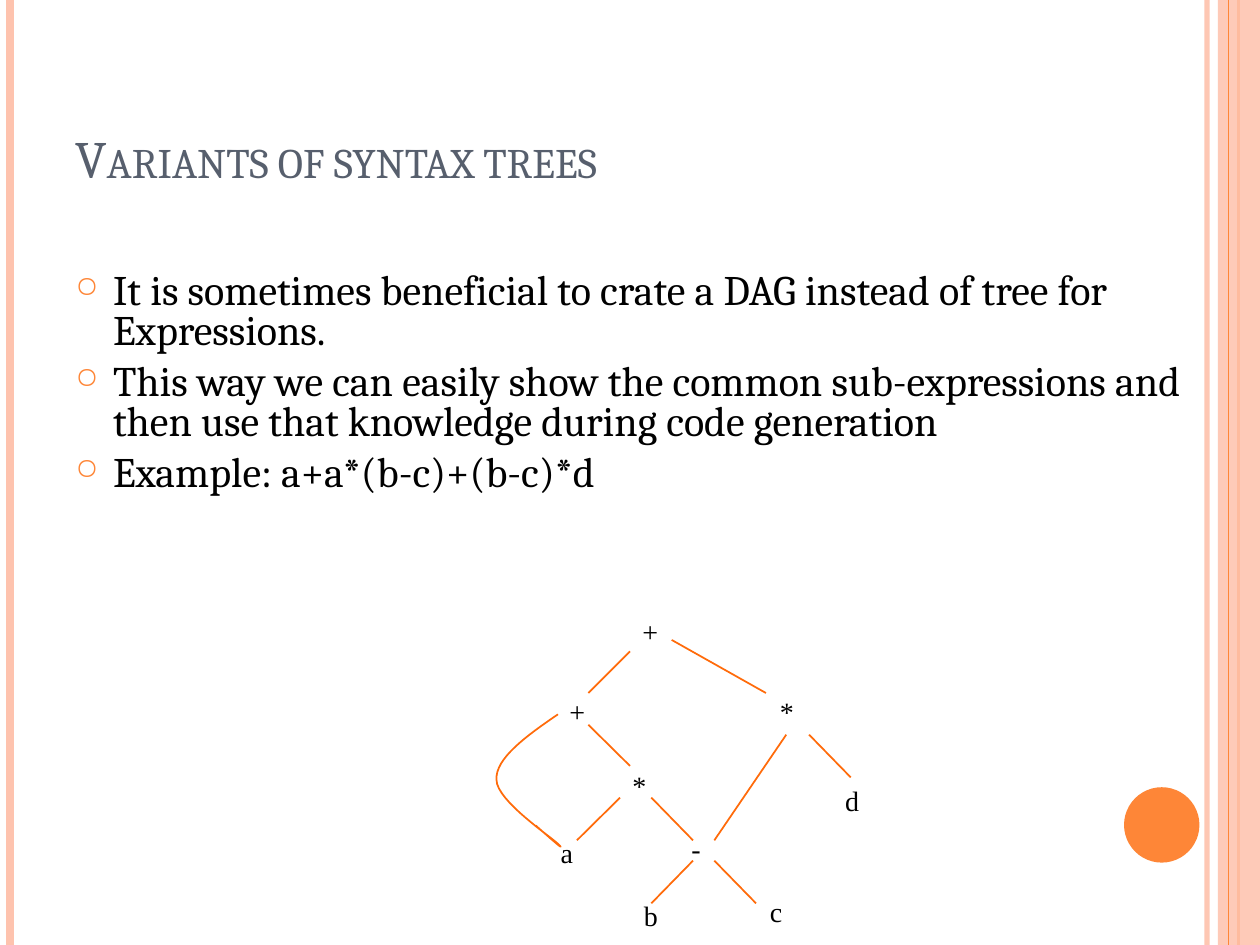
from lxml import etree
from pptx import Presentation
from pptx.dml.color import RGBColor
from pptx.enum.shapes import MSO_CONNECTOR, MSO_SHAPE
from pptx.enum.text import MSO_ANCHOR, MSO_AUTO_SIZE
from pptx.oxml.ns import qn
from pptx.util import Cm, Pt

STRAIGHT = MSO_CONNECTOR.STRAIGHT
RECTANGLE, OVAL = MSO_SHAPE.RECTANGLE, MSO_SHAPE.OVAL
TOP, BOTTOM = MSO_ANCHOR.TOP, MSO_ANCHOR.BOTTOM
FIT_SHAPE = MSO_AUTO_SIZE.SHAPE_TO_FIT_TEXT

PEACH = RGBColor(0xFE, 0xC3, 0xAE)
ORANGE = RGBColor(0xFE, 0x86, 0x37)
EDGE = RGBColor(0xFF, 0x6B, 0x0A)
SLATE = RGBColor(0x57, 0x5F, 0x6D)
BLACK = RGBColor(0, 0, 0)

WIDTH, HEIGHT = 25.4, 19.05

BULLETS = [
    "It is sometimes beneficial to crate a DAG instead of tree for Expressions.",
    "This way we can easily show the common sub-expressions and then use that knowledge during code generation",
    "Example: a+a*(b-c)+(b-c)*d",
]
NODES = [
    ("+", 2.7, 0.02), ("+", 1.23, 1.62), ("*", 5.47, 1.62),
    ("*", 2.5, 3.12), ("-", 3.69, 4.39), ("b", 2.73, 5.73),
    ("c", 5.27, 5.66), ("a", 1.05, 4.46), ("d", 6.79, 3.42),
]
EDGES = [
    (2.7, 0.88, 1.86, 1.72), (3.54, 0.65, 5.44, 1.72),
    (1.86, 2.36, 2.7, 3.19), (2.5, 3.83, 1.63, 4.69),
    (3.13, 3.83, 3.97, 4.69), (5.85, 2.56, 4.4, 4.69),
    (6.31, 2.56, 7.15, 3.42), (3.97, 5.1, 3.13, 5.96),
    (4.4, 5.1, 5.24, 5.96),
]
SHARED_LEAF_CURVE = [
    ((1.25, 2.15), (0.62, 2.58), (-0.02, 3.04), (0.01, 3.47)),
    ((0.01, 3.47), (0.01, 3.9), (1.15, 4.64), (1.28, 4.79)),
    ((1.28, 4.79), (1.43, 4.95), (0.8, 4.39), (0.8, 4.39)),
]


def set_alpha(element, percent):
    """Make the solid colour inside an element partly transparent."""
    color = next(element.iter(qn("a:srgbClr")))
    etree.SubElement(color, qn("a:alpha"), val=str(percent * 1000))


def add_line(page, start, end, color, weight, alpha=100):
    """Draw a straight line between two points."""
    line = page.shapes.add_connector(STRAIGHT, *map(Cm, start + end))
    line.line.color.rgb = color
    line.line.width = Pt(weight)
    properties = line._element.spPr
    if alpha < 100:
        set_alpha(properties, alpha)
    etree.SubElement(properties, qn("a:effectLst"))


def add_block(page, preset, frame, color, alpha=100):
    """Draw a filled shape without outline."""
    block = page.shapes.add_shape(preset, *map(Cm, frame))
    block.shadow.inherit = False
    block.fill.solid()
    block.fill.fore_color.rgb = color
    block.line.fill.background()
    if alpha < 100:
        set_alpha(block._element.spPr, alpha)


def add_bullet(para):
    """Give a paragraph a hanging orange ring bullet."""
    properties = para._p.get_or_add_pPr()
    properties.set("marL", str(Cm(0.76)))
    properties.set("indent", str(Cm(-0.76)))
    color = etree.SubElement(properties, qn("a:buClr"))
    etree.SubElement(color, qn("a:srgbClr"), val=str(ORANGE))
    etree.SubElement(properties, qn("a:buSzPct"), val="70000")
    etree.SubElement(properties, qn("a:buChar"), char="○")


def add_text(page, frame, lines, font="Cambria", size=24, color=BLACK, anchor=TOP,
             wrap=True, bullets=False, small_caps=False):
    """Place a text box with one paragraph for each line."""
    box = page.shapes.add_textbox(*map(Cm, frame))
    text = box.text_frame
    text.word_wrap = wrap
    text.vertical_anchor = anchor
    if not wrap:
        text.auto_size = FIT_SHAPE
    for index, line in enumerate(lines):
        para = text.add_paragraph() if index else text.paragraphs[0]
        span = para.add_run()
        span.text = line
        span.font.name = font
        span.font.size = Pt(size)
        span.font.color.rgb = color
        if small_caps:
            span._r.get_or_add_rPr().set("cap", "small")
        if bullets:
            para.line_spacing = 0.8
            para.space_before = Pt(6)
            add_bullet(para)


def add_frame(page, width, height):
    """Draw the side stripes and the corner disc."""
    def stripe(x, color, weight, alpha=100):
        add_line(page, (x, 0), (x, height), color, weight, alpha)

    stripe(width - 1.07, PEACH, 3, 93)
    stripe(0.2, PEACH, 4.5)
    stripe(width - 0.43, ORANGE, 1.5)
    add_block(page, RECTANGLE, (width - 0.85, 0, 0.85, height), PEACH, 87)
    stripe(width - 0.64, ORANGE, 0.75)
    add_block(page, OVAL, (width - 2.74, height - 3.18, 1.52, 1.52), ORANGE)


def bezier_point(curve, t):
    """Return the point at t on a cubic curve."""
    weights = ((1 - t) ** 3, 3 * t * (1 - t) ** 2, 3 * t ** 2 * (1 - t), t ** 3)
    return tuple(sum(w * point[axis] for w, point in zip(weights, curve)) for axis in (0, 1))


def add_curve(page, left, top, curves, steps=16):
    """Draw joined cubic curves as one open outline."""
    points = [bezier_point(curve, step / steps) for curve in curves for step in range(steps + 1)]
    points = [(Cm(left + x), Cm(top + y)) for x, y in points]
    builder = page.shapes.build_freeform(*points[0])
    builder.add_line_segments(points[1:], close=False)
    outline = builder.convert_to_shape()
    outline.shadow.inherit = False
    outline.fill.background()
    outline.line.color.rgb = EDGE
    outline.line.width = Pt(1)


def add_graph(page, left, top):
    """Draw the expression DAG from its top left corner."""
    for label, x, y in NODES:
        add_text(page, (left + x, top + y, 0.78, 0.94), [label],
                 font="Times New Roman", size=16, wrap=False)
    for x1, y1, x2, y2 in EDGES:
        add_line(page, (left + x1, top + y1), (left + x2, top + y2), EDGE, 1)
    add_curve(page, left, top, SHARED_LEAF_CURVE)


def main():
    """Build the slide and save the deck."""
    deck = Presentation()
    deck.slide_width, deck.slide_height = Cm(WIDTH), Cm(HEIGHT)
    page = deck.slides.add_slide(deck.slide_layouts[6])
    add_frame(page, WIDTH, HEIGHT)
    add_text(page, (1.27, 0.76, 20.75, 3.18), ["Variants of syntax trees"],
             size=30, color=SLATE, anchor=BOTTOM, small_caps=True)
    add_text(page, (1.27, 5.38, 22.86, 6.91), BULLETS, bullets=True)
    add_graph(page, 10, 12.25)
    deck.save("out.pptx")


if __name__ == "__main__":
    main()
